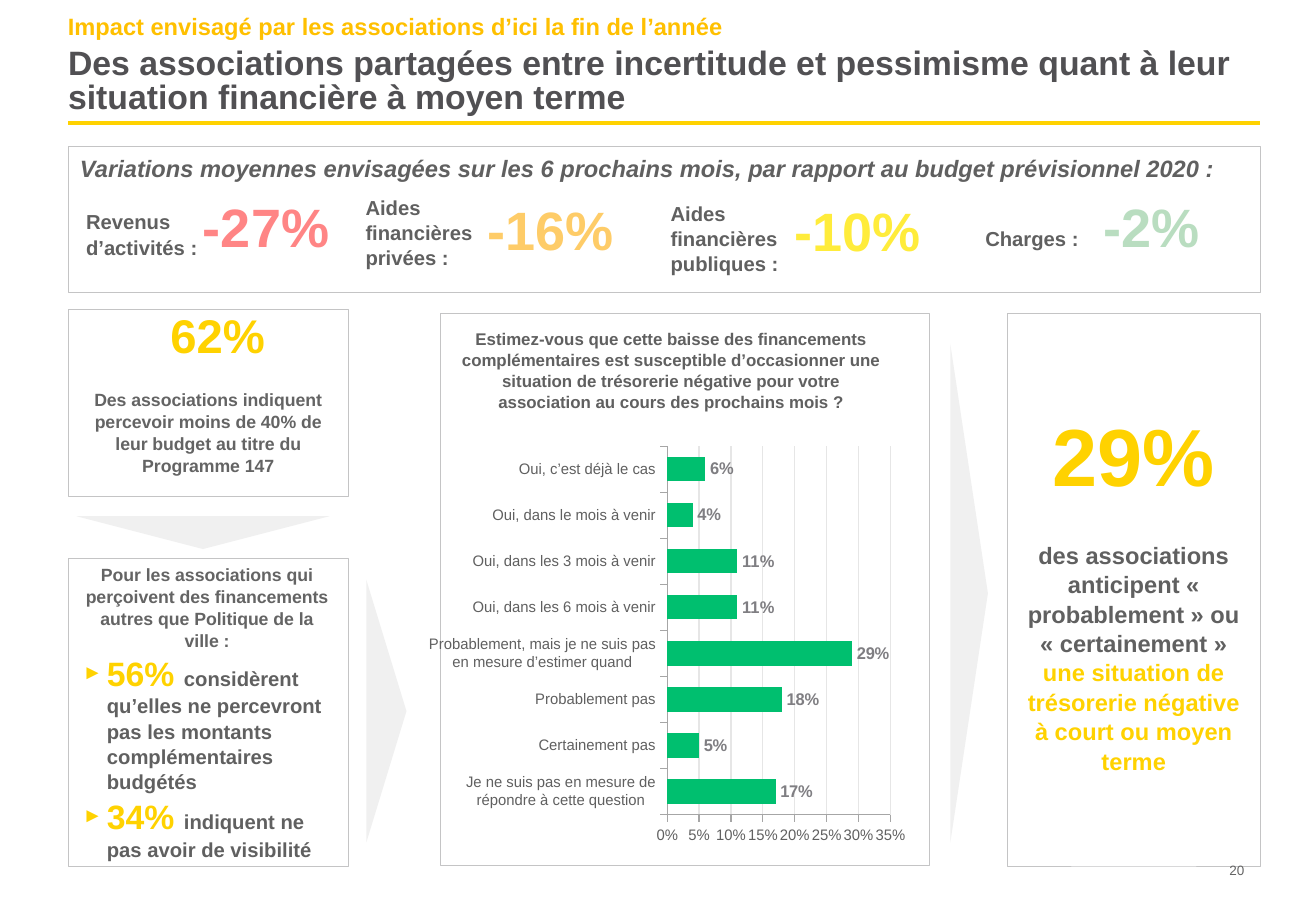
from dataclasses import dataclass

from lxml import etree
from pptx import Presentation
from pptx.chart.data import CategoryChartData
from pptx.dml.color import RGBColor
from pptx.enum.chart import XL_CHART_TYPE as ChartType, XL_LABEL_POSITION as LabelPosition
from pptx.enum.chart import XL_TICK_MARK as TickMark
from pptx.enum.shapes import MSO_CONNECTOR as Connector, MSO_SHAPE as Shape
from pptx.enum.text import MSO_ANCHOR as Anchor, MSO_AUTO_SIZE as AutoSize, PP_ALIGN as Align
from pptx.oxml import parse_xml
from pptx.oxml.ns import qn
from pptx.util import Inches, Pt


@dataclass(frozen=True)
class Theme:
    font: str = "Arial"
    title: str = "515053"
    text: str = "606060"
    note: str = "646464"
    label: str = "7F7E82"
    accent: str = "FFD200"
    kicker: str = "FFC000"
    bar: str = "00BF6F"
    border: str = "C4C4C5"
    arrow: str = "F0F0F0"
    grid: str = "E6E6E6"
    axis: str = "A6A6A6"
    number_size: float = 8
    axis_size: float = 9
    small: float = 10
    note_size: float = 10.5
    body: float = 12
    lead: float = 14
    title_size: float = 20
    share: float = 28
    variation: float = 32
    headline: float = 48


theme = Theme()
rgb = RGBColor.from_string
TIGHT = Pt(12.9)
LOOSE = 1.04


def write(paragraph, parts, align=Align.LEFT, spacing=LOOSE, bold=True, italic=False):
    """Fill a paragraph with (text, size, colour) parts."""
    paragraph.alignment = align
    paragraph.line_spacing = spacing
    paragraph.space_before = Pt(0)
    font = paragraph.font
    font.name, font.bold, font.italic = theme.font, bold, italic
    for text, size, color in parts:
        run = paragraph.add_run()
        run.text = text
        target = font if len(parts) == 1 else run.font
        target.size = Pt(size)
        target.color.rgb = rgb(color)


def add_text(place, text, size, color, anchor=Anchor.TOP, **layout):
    frame = slide.shapes.add_textbox(*map(Inches, place)).text_frame
    frame.word_wrap = True
    frame.vertical_anchor = anchor
    write(frame.paragraphs[0], [(text, size, color)], **layout)
    return frame


prs = Presentation()
prs.slide_width, prs.slide_height = Inches(10.83), Inches(7.5)
slide = prs.slides.add_slide(prs.slide_layouts[1])
title, findings = slide.placeholders

# Heading
for holder, place in ((title, (0.56, 0.34, 9.81, 0.68)), (findings, (0.58, 4.98, 2.25, 1.77))):
    holder.left, holder.top, holder.width, holder.height = map(Inches, place)
    holder.text_frame.auto_size = AutoSize.NONE
    holder.text_frame.vertical_anchor = Anchor.MIDDLE
heading = title.text_frame
heading.margin_left = heading.margin_right = heading.margin_top = heading.margin_bottom = 0
write(heading.paragraphs[0], [(
    "Des associations partagées entre incertitude et pessimisme quant à leur situation "
    "financière à moyen terme", theme.title_size, theme.title)], spacing=Pt(20))
add_text((0.46, 0.1, 9.9, 0.24), "Impact envisagé par les associations d’ici la fin de l’année",
         theme.lead, theme.kicker, spacing=TIGHT)
rule = slide.shapes.add_connector(Connector.STRAIGHT, Inches(0.56), Inches(1.01),
                                  Inches(10.37), Inches(1.01))
rule.line.color.rgb = rgb(theme.accent)
rule.line.width = Pt(2.25)
etree.SubElement(rule.element.spPr, qn("a:effectLst"))

# Frames and arrows
frames = [
    (0.56, 1.21, 9.81, 1.2),
    (0.56, 2.55, 2.31, 1.54),
    (0.56, 4.6, 2.31, 2.53),
    (8.29, 2.58, 2.08, 4.55),
]
for place in frames:
    panel = slide.shapes.add_shape(Shape.RECTANGLE, *map(Inches, place))
    panel.shadow.inherit = False
    panel.fill.background()
    panel.line.color.rgb = rgb(theme.border)
    panel.line.width = Pt(0.5)
conclusion = panel.text_frame

arrows = [
    ((0.63, 4.25, 2.08, 0.27), 180),
    ((2.1, 5.69, 2.16, 0.33), 90),
    ((5.92, 4.73, 4.11, 0.31), 90),
]
for place, rotation in arrows:
    arrow = slide.shapes.add_shape(Shape.ISOSCELES_TRIANGLE, *map(Inches, place))
    arrow.shadow.inherit = False
    arrow.rotation = rotation
    arrow.fill.solid()
    arrow.fill.fore_color.rgb = rgb(theme.arrow)
    arrow.line.fill.background()

# Average variations
add_text((0.56, 1.21, 9.81, 0.34),
         "Variations moyennes envisagées sur les 6 prochains mois, par rapport au budget "
         "prévisionnel 2020 :", theme.lead, theme.text, italic=True)
variations = [
    ("Revenus d’activités :", 0.61, 1.67, "-27%", 1.05, 1.87, "FF8585"),
    ("Aides financières privées :", 2.91, 1.55, "-16%", 3.39, 1.89, "FECC68"),
    ("Aides financières publiques :", 5.42, 1.6, "-10%", 5.92, 1.9, "FFEC3B"),
    ("Charges :", 8.01, 1.81, "-2%", 8.34, 1.87, "B9DDC0"),
]
for label, label_x, label_y, change, change_x, change_y, color in variations:
    add_text((label_x, label_y, 1.32, 0.5), label, theme.body, theme.text)
    add_text((change_x, change_y, 2.28, 0.34), change, theme.variation, color,
             Anchor.MIDDLE, align=Align.CENTER, spacing=TIGHT)

# Share of the budget
add_text((1.25, 2.61, 1.08, 0.45), "62%", theme.share, theme.accent, Anchor.MIDDLE,
         align=Align.CENTER, spacing=Pt(22))
add_text((0.58, 3.15, 2.27, 0.65),
         "Des associations indiquent percevoir moins de 40% de leur budget au titre du "
         "Programme 147", theme.note_size, theme.note, align=Align.CENTER, spacing=TIGHT)

# Findings list
intro = findings.text_frame.paragraphs[0]
intro_props = intro._p.get_or_add_pPr()
intro_props.set("marL", "0")
intro_props.set("indent", "0")
etree.SubElement(intro_props, qn("a:buNone"))
write(intro, [("Pour les associations qui perçoivent des financements autres que Politique de la "
               "ville :", theme.note_size, theme.note)], Align.CENTER, TIGHT)
points = [
    ("56% ", "considèrent qu’elles ne percevront pas les montants complémentaires budgétés"),
    ("34% ", "indiquent ne pas avoir de visibilité"),
]
for share, statement in points:
    point = findings.text_frame.add_paragraph()
    props = point._p.get_or_add_pPr()
    props.set("marL", str(Inches(0.2)))
    props.set("indent", str(Inches(-0.2)))
    bullet_color = etree.SubElement(props, qn("a:buClr"))
    etree.SubElement(bullet_color, qn("a:srgbClr"), val=theme.accent)
    etree.SubElement(props, qn("a:buSzPct"), val="60000")
    etree.SubElement(props, qn("a:buFont"), typeface=theme.font)
    etree.SubElement(props, qn("a:buChar"), char="►")
    write(point, [(share, theme.title_size, theme.accent), (statement, theme.body, theme.text)])

# Cash-flow survey
answers = [
    ("Je ne suis pas en mesure de répondre à cette question", 0.17),
    ("Certainement pas", 0.05),
    ("Probablement pas", 0.18),
    ("Probablement, mais je ne suis pas en mesure d’estimer quand", 0.29),
    ("Oui, dans les 6 mois à venir", 0.11),
    ("Oui, dans les 3 mois à venir", 0.11),
    ("Oui, dans le mois à venir", 0.04),
    ("Oui, c’est déjà le cas", 0.06),
]
survey = CategoryChartData(number_format="0%")
survey.categories = [answer for answer, _ in answers]
survey.add_series("Réponses", [value for _, value in answers])
chart = slide.shapes.add_chart(ChartType.BAR_CLUSTERED, Inches(3.53), Inches(2.58),
                               Inches(4.12), Inches(4.55), survey).chart
chart.has_legend = chart.has_title = False
chart.font.name, chart.font.size = theme.font, Pt(theme.small)
chart.font.color.rgb = rgb(theme.label)
bars = chart.plots[0]
bars.gap_width = 90
bars.vary_by_categories = False
bars.series[0].format.fill.solid()
bars.series[0].format.fill.fore_color.rgb = rgb(theme.bar)
bars.has_data_labels = True
labels = bars.data_labels
labels.show_value = True
labels.position = LabelPosition.OUTSIDE_END
labels.number_format, labels.number_format_is_linked = "0%", False
labels.font.name, labels.font.size, labels.font.bold = theme.font, Pt(theme.small), True
labels.font.color.rgb = rgb(theme.label)
scale = chart.value_axis
scale.minimum_scale, scale.maximum_scale, scale.major_unit = 0, 0.35, 0.05
scale.major_gridlines.format.line.color.rgb = rgb(theme.grid)
scale.major_gridlines.format.line.width = Pt(0.75)
scale.tick_labels.number_format, scale.tick_labels.number_format_is_linked = "0%", False
for axis in (scale, chart.category_axis):
    axis.major_tick_mark = TickMark.OUTSIDE
    axis.format.line.color.rgb = rgb(theme.axis)
    axis.tick_labels.font.size = Pt(theme.axis_size)
    axis.tick_labels.font.color.rgb = rgb(theme.text)

plot_area = chart._chartSpace.chart.plotArea
for automatic in plot_area.findall(qn("c:layout")):
    plot_area.remove(automatic)
layout = etree.Element(qn("c:layout"))
manual = etree.SubElement(layout, qn("c:manualLayout"))
settings = {"layoutTarget": "inner", "xMode": "edge", "yMode": "edge",
            "x": "0.464", "y": "0.24", "w": "0.457", "h": "0.668"}
for setting, value in settings.items():
    etree.SubElement(manual, qn(f"c:{setting}"), val=value)
plot_area.insert(0, layout)
chart._chartSpace.find(qn("c:txPr")).addprevious(parse_xml(
    '<c:spPr xmlns:c="http://schemas.openxmlformats.org/drawingml/2006/chart" '
    'xmlns:a="http://schemas.openxmlformats.org/drawingml/2006/main"><a:noFill/>'
    f'<a:ln w="{Pt(0.5)}"><a:solidFill><a:srgbClr val="{theme.border}"/></a:solidFill></a:ln>'
    '</c:spPr>'))
add_text((3.64, 2.65, 3.76, 0.77),
         "Estimez-vous que cette baisse des financements complémentaires est susceptible "
         "d’occasionner une situation de trésorerie négative pour votre association au cours "
         "des prochains mois ?", theme.small, theme.text, align=Align.CENTER)

# Conclusion
conclusion.vertical_anchor = Anchor.TOP
conclusion.margin_top = Inches(1.25)
headline = conclusion.paragraphs[0]
write(headline, [("29%", theme.headline, theme.accent)], Align.CENTER, Pt(22))
headline.space_after = Pt(22)
write(conclusion.add_paragraph(), [
    ("des associations anticipent « probablement » ou « certainement » ", theme.lead, theme.text),
    ("une situation de trésorerie négative à court ou moyen terme", theme.lead, theme.accent),
], Align.CENTER)

page = add_text((9.98, 7.08, 0.4, 0.15), "20", theme.number_size, theme.note, Anchor.BOTTOM,
                align=Align.CENTER, bold=False)
page.margin_left = page.margin_right = page.margin_top = page.margin_bottom = 0

prs.save("out.pptx")
